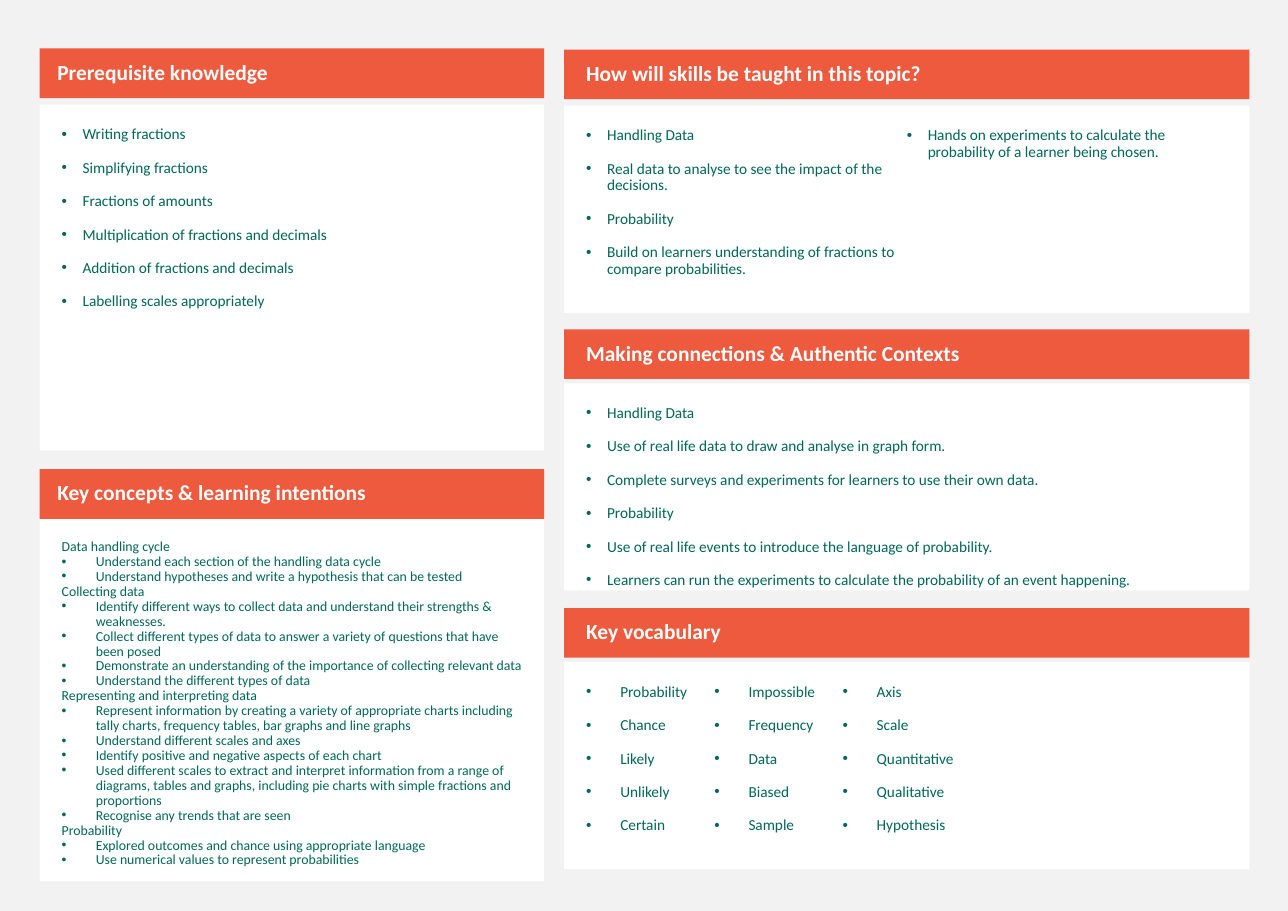
from dataclasses import dataclass

from lxml.etree import SubElement
from pptx import Presentation
from pptx.dml.color import RGBColor
from pptx.enum.shapes import MSO_SHAPE as Shape
from pptx.enum.text import MSO_ANCHOR as Anchor, MSO_AUTO_SIZE as AutoSize, PP_ALIGN as Align
from pptx.oxml.ns import qn
from pptx.util import Inches, Pt

FONT = "Calibri"
GREY, WHITE, ORANGE, GREEN = "F2F2F2", "FFFFFF", "ED5A3E", "006758"
TITLE_HEIGHT = 0.45


@dataclass
class Line:
    text: str
    bullet: bool = True


@dataclass
class Column:
    left: float
    width: float
    title_inset: float


@dataclass
class Panel:
    column: Column
    title: str
    title_top: float
    body_top: float
    body_height: float
    lines: list[Line]
    size: float = 10
    space_before: float = 11
    indent: float = 0.19
    text_columns: int = 1


def bullets(*texts: str) -> list[Line]:
    return [Line(text) for text in texts]


def topic(heading: str, *texts: str) -> list[Line]:
    return [Line(heading, bullet=False), *bullets(*texts)]


def colour(value: str) -> RGBColor:
    return RGBColor.from_string(value)


def add_box(page, left: float, top: float, width: float, height: float, fill: str,
            insets: tuple[float, float, float, float], anchor=Anchor.TOP, text_columns: int = 1):
    """Draw a filled rectangle and return its text frame."""
    box = page.shapes.add_shape(Shape.RECTANGLE, Inches(left), Inches(top),
                                Inches(width), Inches(height))
    box.shadow.inherit = False
    box.fill.solid()
    box.fill.fore_color.rgb = colour(fill)
    box.line.fill.background()
    frame = box.text_frame
    frame.word_wrap = True
    frame.auto_size = AutoSize.NONE
    frame.vertical_anchor = anchor
    (frame.margin_left, frame.margin_top,
     frame.margin_right, frame.margin_bottom) = map(Inches, insets)
    if text_columns > 1:
        frame._txBody.bodyPr.set("numCol", str(text_columns))
    return frame


def write(para, text: str, *, size: float, color: str, bold: bool = False,
          space_before: float = 11, bullet_indent: float = 0) -> None:
    """Fill one paragraph, with a hanging bullet if an indent is given."""
    para.alignment = Align.LEFT
    para.line_spacing = 0.9
    para.space_before = Pt(space_before)
    if bullet_indent:
        properties = para._p.get_or_add_pPr()
        properties.set("marL", str(Inches(bullet_indent)))
        properties.set("indent", str(-Inches(bullet_indent)))
        SubElement(properties, qn("a:buFont"), typeface="Arial")
        SubElement(properties, qn("a:buChar"), char="•")
    span = para.add_run()
    span.text = text
    span.font.name = FONT
    span.font.size = Pt(size)
    span.font.bold = bold
    span.font.color.rgb = colour(color)


def add_panel(page, panel: Panel) -> None:
    column = panel.column
    # White body
    body = add_box(page, column.left, panel.body_top, column.width, panel.body_height,
                   WHITE, (0.2, 0.2, 0.2, 0.2), text_columns=panel.text_columns)
    for index, line in enumerate(panel.lines):
        para = body.add_paragraph() if index else body.paragraphs[0]
        write(para, line.text, size=panel.size, color=GREEN, space_before=panel.space_before,
              bullet_indent=panel.indent if line.bullet else 0)
    # Title bar
    title = add_box(page, column.left, panel.title_top, column.width, TITLE_HEIGHT, ORANGE,
                    (column.title_inset, 0.05, 0.1, 0.05), anchor=Anchor.MIDDLE)
    write(title.paragraphs[0], panel.title, size=14, color=WHITE, bold=True)


LEFT = Column(0.36, 4.58, 0.16)
RIGHT = Column(5.12, 6.22, 0.2)

PANELS = [
    Panel(LEFT, "Prerequisite knowledge", 0.44, 0.95, 3.14, bullets(
        "Writing fractions",
        "Simplifying fractions",
        "Fractions of amounts",
        "Multiplication of fractions and decimals",
        "Addition of fractions and decimals",
        "Labelling scales appropriately",
    )),
    Panel(LEFT, "Key concepts & learning intentions", 4.26, 4.7, 3.3, [
        *topic("Data handling cycle",
               "Understand each section of the handling data cycle",
               "Understand hypotheses and write a hypothesis that can be tested"),
        *topic("Collecting data",
               "Identify different ways to collect data and understand their strengths & "
               "weaknesses.",
               "Collect different types of data to answer a variety of questions that have "
               "been posed",
               "Demonstrate an understanding of the importance of collecting relevant data",
               "Understand the different types of data"),
        *topic("Representing and interpreting data",
               "Represent information by creating a variety of appropriate charts including "
               "tally charts, frequency tables, bar graphs and line graphs",
               "Understand different scales and axes",
               "Identify positive and negative aspects of each chart",
               "Used different scales to extract and interpret information from a range of "
               "diagrams, tables and graphs, including pie charts with simple fractions and "
               "proportions",
               "Recognise any trends that are seen"),
        *topic("Probability",
               "Explored outcomes and chance using appropriate language",
               "Use numerical values to represent probabilities"),
    ], size=9, space_before=0, indent=0.31),
    Panel(RIGHT, "How will skills be taught in this topic?", 0.45, 0.96, 1.88, bullets(
        "Handling Data",
        "Real data to analyse to see the impact of the decisions.",
        "Probability",
        "Build on learners understanding of fractions to compare probabilities.",
        "Hands on experiments to calculate the probability of a learner being chosen.",
    ), text_columns=2),
    Panel(RIGHT, "Making connections & Authentic Contexts", 2.99, 3.48, 1.88, bullets(
        "Handling Data",
        "Use of real life data to draw and analyse in graph form.",
        "Complete surveys and experiments for learners to use their own data.",
        "Probability",
        "Use of real life events to introduce the language of probability.",
        "Learners can run the experiments to calculate the probability of an event happening.",
    )),
    Panel(RIGHT, "Key vocabulary", 5.52, 6.01, 1.88, bullets(
        "Probability", "Chance", "Likely", "Unlikely", "Certain",
        "Impossible", "Frequency", "Data", "Biased", "Sample",
        "Axis", "Scale", "Quantitative", "Qualitative", "Hypothesis",
    ), indent=0.31, text_columns=5),
]


def main() -> None:
    deck = Presentation()
    deck.slide_width, deck.slide_height = Inches(11.69), Inches(8.27)
    page = deck.slides.add_slide(deck.slide_layouts[6])
    page.background.fill.solid()
    page.background.fill.fore_color.rgb = colour(GREY)
    for panel in PANELS:
        add_panel(page, panel)
    deck.save("out.pptx")


if __name__ == "__main__":
    main()
